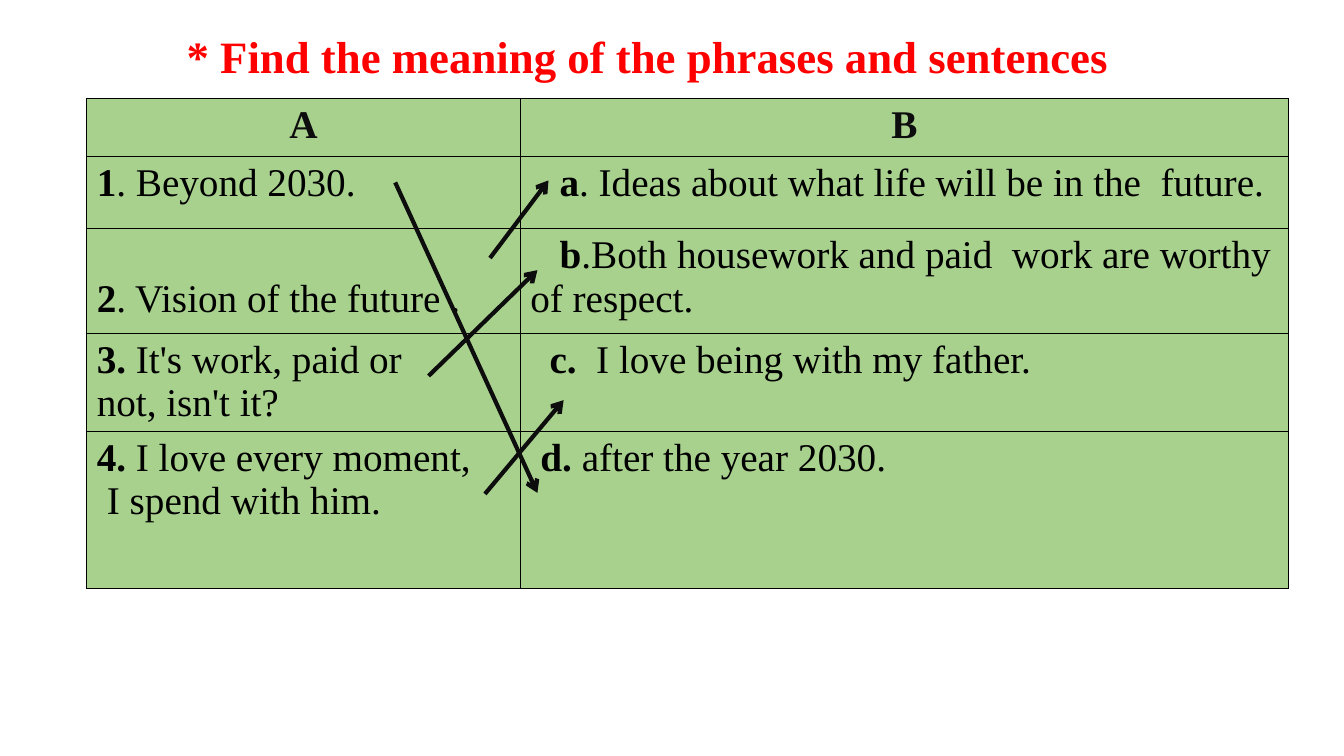
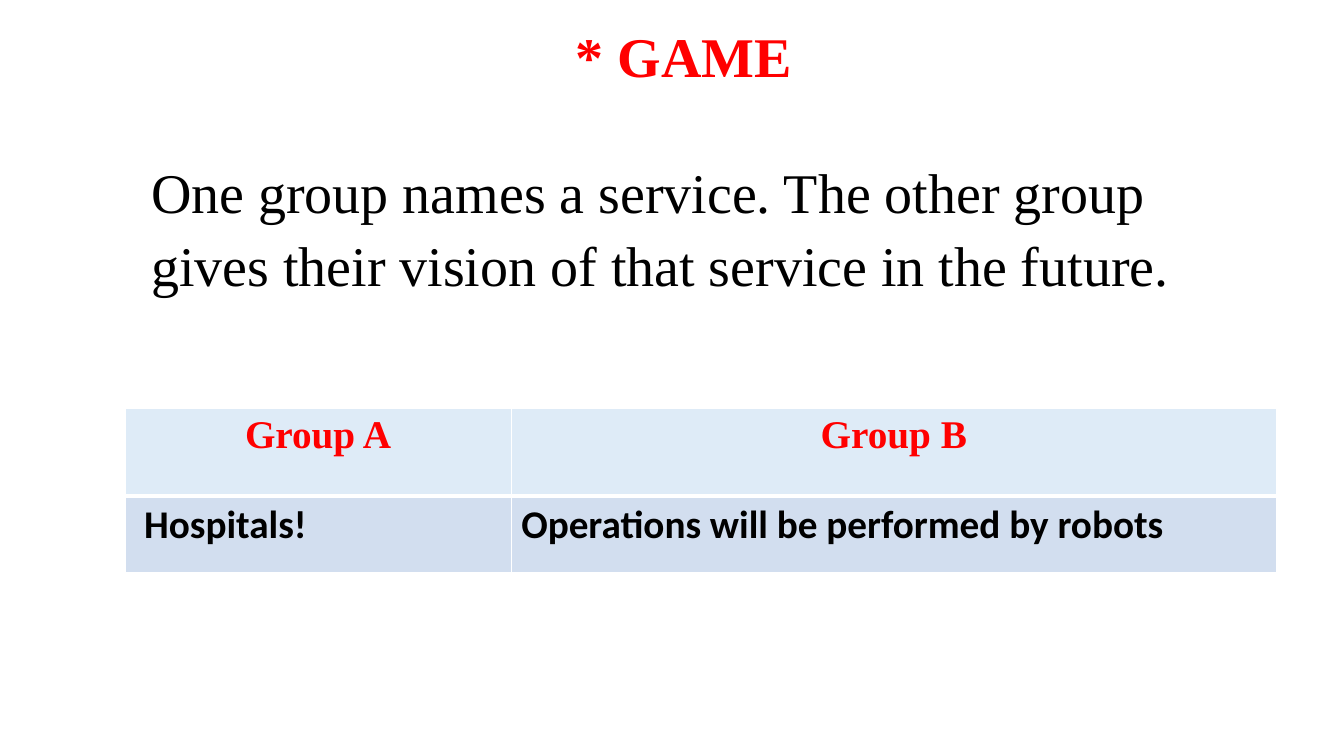
from lxml.etree import SubElement as Sub
from pptx import Presentation
from pptx.dml.color import RGBColor as RGB
from pptx.enum.shapes import MSO_CONNECTOR as Link
from pptx.enum.text import MSO_ANCHOR as Anchor, MSO_AUTO_SIZE as Fit, PP_ALIGN as Align
from pptx.oxml.ns import qn
from pptx.util import Inches, Pt

RED, BLACK, INK, WHITE = "FF0000", "000000", "0D0D0D", "FFFFFF"
GREEN, PALE, BLUE = "A9D18E", "DEEBF7", "D2DEEF"
SERIF, SANS = "Times New Roman", "Calibri"


def paint(target, color):
    target.rgb = RGB.from_string(color)


def write(para, words, lead="", size=28, color=BLACK, font=SERIF,
          align=Align.LEFT, indent=0):
    para.alignment = align
    para.space_before = Pt(0)
    props = para._p.get_or_add_pPr()
    props.set("marL", "0")
    props.set("indent", str(Inches(indent)))
    for part, bold in ((lead, True), (words, False)):
        if part:
            run = para.add_run()
            run.text = part
            run.font.name, run.font.size, run.font.bold = font, Pt(size), bold
            paint(run.font.color, color)


class Deck:
    def __init__(self):
        self.show = Presentation()
        self.show.slide_width = Inches(13.33)
        self.show.slide_height = Inches(7.5)
        self.slide = None

    def add(self, layout):
        self.slide = self.show.slides.add_slide(self.show.slide_layouts[layout])

    def place(self, holder, box, anchor):
        holder.left, holder.top, holder.width, holder.height = map(Inches, box)
        frame = holder.text_frame
        frame.word_wrap = True
        frame.auto_size = Fit.NONE
        frame.vertical_anchor = anchor
        return frame.paragraphs[0]

    def title(self, words, box, size, align):
        para = self.place(self.slide.shapes.title, box, Anchor.MIDDLE)
        write(para, "", lead=words, size=size, color=RED, align=align)

    def body(self, words, box, size):
        para = self.place(self.slide.placeholders[1], box, Anchor.TOP)
        Sub(para._p.get_or_add_pPr(), qn("a:buNone"))
        para.line_spacing = 1.08
        write(para, words, size=size)

    def edge(self, cell, side, color, width):
        line = Sub(cell._tc.get_or_add_tcPr(), qn("a:ln" + side), w=str(Pt(width)))
        fill = Sub(line, qn("a:solidFill"))
        Sub(fill, qn("a:srgbClr"), val=color)

    def grid(self, left, top, cols, rows, cells, fills, looks, color, rule=1):
        table = self.slide.shapes.add_table(
            len(rows), len(cols), Inches(left), Inches(top),
            Inches(sum(cols)), Inches(sum(rows))).table
        table.first_row = table.horz_banding = False
        for col, width in zip(table.columns, cols):
            col.width = Inches(width)
        for r, (row, height) in enumerate(zip(table.rows, rows)):
            row.height = Inches(height)
            head, foot = rule if r == 1 else 1, rule if r == 0 else 1
            for cell, lines in zip(row.cells, cells[r]):
                for side, width in zip("LRTB", (1, 1, head, foot)):
                    self.edge(cell, side, color, width)
                cell.fill.solid()
                paint(cell.fill.fore_color, fills[r])
                for i, (lead, words, indent) in enumerate(lines):
                    frame = cell.text_frame
                    para = frame.add_paragraph() if i else frame.paragraphs[0]
                    write(para, words, lead=lead, indent=indent, **looks[r])
        return table

    def arrow(self, *ends):
        line = self.slide.shapes.add_connector(Link.STRAIGHT, *map(Inches, ends))
        line.line.width = Pt(3)
        paint(line.line.color, INK)
        Sub(line.line._get_or_add_ln(), qn("a:tailEnd"), type="arrow")
        Sub(line._element.spPr, qn("a:effectLst"))


def match(deck):
    deck.add(5)
    deck.title("* Find the meaning of the phrases and sentences",
               (1.75, 0.23, 9.48, 0.64), 32, Align.LEFT)
    cells = [
        [[("A", "", 0)], [("B", "", 0)]],
        [[("1", ". Beyond 2030.", 0)],
         [("a", ". Ideas about what life will be in the  future.", 0.29)]],
        [[("2", ". Vision of the future .", 0)],
         [("b", ".Both housework and paid  work are worthy of respect.", 0.29)]],
        [[("3.", " It's work, paid or", 0), ("", "not, isn't it?", 0)],
         [("c. ", " I love being with my father.", 0.19)]],
        [[("4.", " I love every moment,", 0), ("", "I spend with him.", 0.1)],
         [("d. ", "after the year 2030.", 0.1)]],
    ]
    looks = [dict(color=INK, align=Align.CENTER)] + [{}] * 4
    table = deck.grid(0.86, 0.98, (4.3, 7.62), (0.57, 0.72, 1.04, 0.97, 1.56),
                      cells, [GREEN] * 5, looks, BLACK)
    table.cell(2, 0).margin_top = Inches(0.48)
    for ends in ((3.92, 1.81, 5.33, 4.89), (4.81, 4.9, 5.59, 3.97),
                 (4.25, 3.73, 5.33, 2.68), (4.86, 2.56, 5.44, 1.79)):
        deck.arrow(*ends)


def game(deck):
    deck.add(1)
    deck.title("* GAME", (1.4, 0.16, 10.76, 0.77), 40, Align.CENTER)
    deck.body("One group names a service. The other group gives their vision "
              "of that service in the future.", (1.4, 1.46, 10.76, 1.5), 40)
    cells = [
        [[("Group A", "", 0)], [("Group B", "", 0)]],
        [[("Hospitals!", "", 0.09)],
         [("Operations will be performed by robots", "", 0)]],
    ]
    looks = [dict(color=RED, align=Align.CENTER), dict(font=SANS)]
    deck.grid(1.24, 4.05, (3.83, 7.59), (0.87, 0.76),
              cells, (PALE, BLUE), looks, WHITE, rule=3)


def main():
    deck = Deck()
    match(deck)
    game(deck)
    deck.show.save("out.pptx")


if __name__ == "__main__":
    main()
